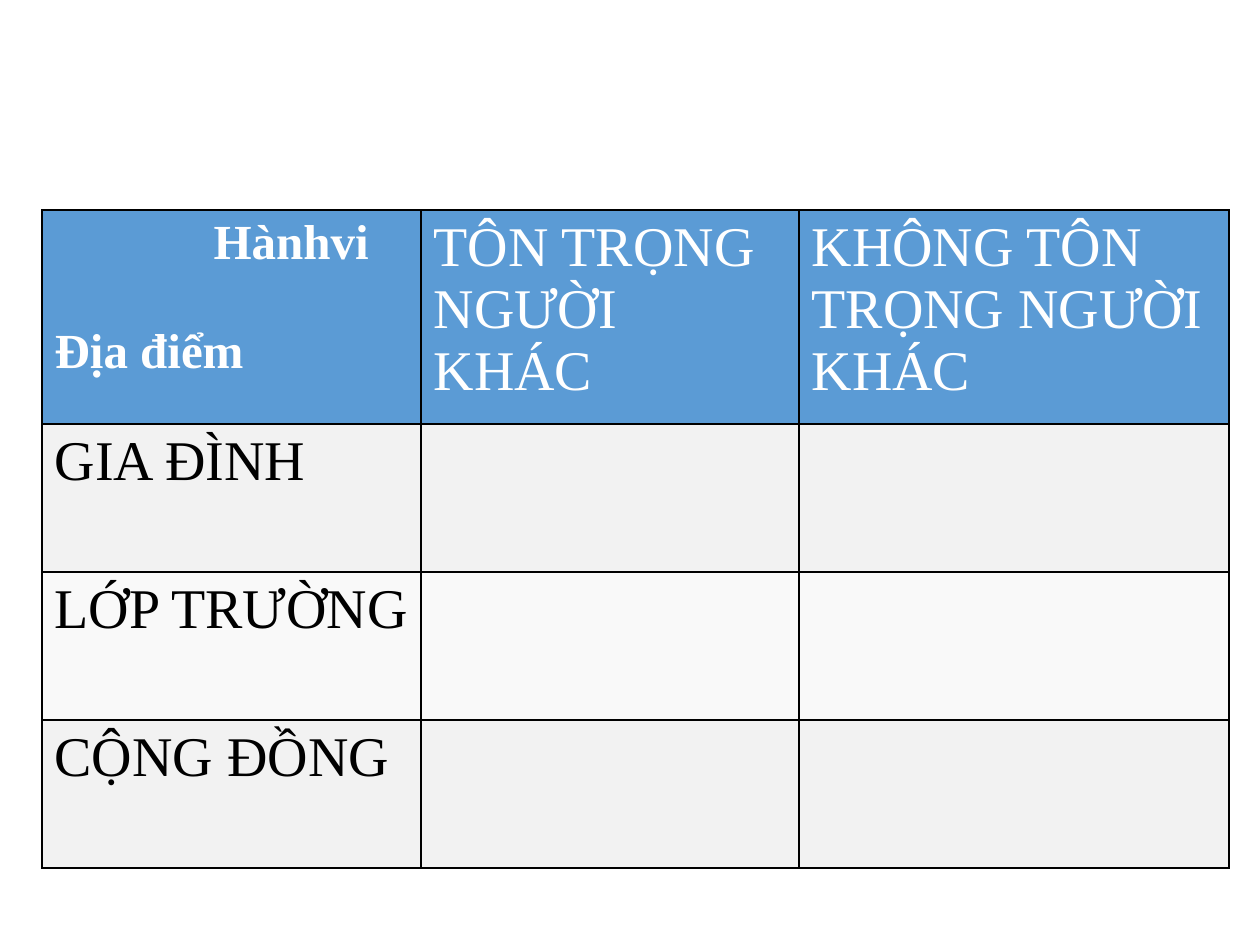
from dataclasses import dataclass

from lxml import etree
from pptx import Presentation
from pptx.dml.color import RGBColor
from pptx.oxml.ns import qn
from pptx.table import _Cell
from pptx.util import Emu, Pt

PX_PER_INCH = 126
FONT = "Times New Roman"
BLACK = RGBColor(0x00, 0x00, 0x00)
WHITE = RGBColor(0xFF, 0xFF, 0xFF)
BLUE = RGBColor(0x5B, 0x9B, 0xD5)
GREY = RGBColor(0xF2, 0xF2, 0xF2)
LIGHT = RGBColor(0xF9, 0xF9, 0xF9)

LEFT, TOP = 42, 210
COLUMNS = [379, 378, 430]
ROWS = [214, 148, 148, 148]


@dataclass
class Line:
    text: str
    size: int = 32
    bold: bool = False
    indent: int = 0
    before: int = 0


HEADER = [
    [Line("Hànhvi", 28, True, indent=159),
     Line("Địa điểm", 28, True, before=54)],
    [Line("TÔN TRỌNG NGƯỜI KHÁC")],
    [Line("KHÔNG TÔN TRỌNG NGƯỜI KHÁC")],
]
PLACES = ["GIA ĐÌNH", "LỚP TRƯỜNG", "CỘNG ĐỒNG"]


def px(n: int) -> Emu:
    return Emu(round(n * 914400 / PX_PER_INCH))


def add_borders(cell: _Cell) -> None:
    tcPr = cell._tc.get_or_add_tcPr()
    for side in ("a:lnL", "a:lnR", "a:lnT", "a:lnB"):
        ln = etree.SubElement(tcPr, qn(side), w=str(Pt(1)))
        fill = etree.SubElement(ln, qn("a:solidFill"))
        etree.SubElement(fill, qn("a:srgbClr"), val=str(BLACK))


def fill_cell(cell: _Cell, lines: list[Line], fill: RGBColor, color: RGBColor) -> None:
    add_borders(cell)
    cell.fill.solid()
    cell.fill.fore_color.rgb = fill
    tf = cell.text_frame
    tf.text = "\n".join(line.text for line in lines)
    for p, line in zip(tf.paragraphs, lines):
        if line.indent:
            p._p.get_or_add_pPr().set("marL", str(px(line.indent)))
        if line.before:
            p.space_before = px(line.before)
        for r in p.runs:
            r.font.name = FONT
            r.font.size = Pt(line.size)
            r.font.bold = line.bold
            r.font.color.rgb = color


def main() -> None:
    prs = Presentation()
    prs.slide_width, prs.slide_height = px(1260), px(945)
    s = prs.slides.add_slide(prs.slide_layouts[6])

    # Table grid
    table = s.shapes.add_table(len(ROWS), len(COLUMNS), px(LEFT), px(TOP),
                               px(sum(COLUMNS)), px(sum(ROWS))).table
    table.first_row = table.horz_banding = False
    for column, width in zip(table.columns, COLUMNS):
        column.width = px(width)
    for row, height in zip(table.rows, ROWS):
        row.height = px(height)

    # Header row
    for c, lines in enumerate(HEADER):
        fill_cell(table.cell(0, c), lines, BLUE, WHITE)

    # One banded row for each place, with room for answers
    for i, place in enumerate(PLACES):
        band = LIGHT if i % 2 else GREY
        for c, lines in enumerate([[Line(place)], [], []]):
            fill_cell(table.cell(i + 1, c), lines, band, BLACK)

    prs.save("out.pptx")


if __name__ == "__main__":
    main()
